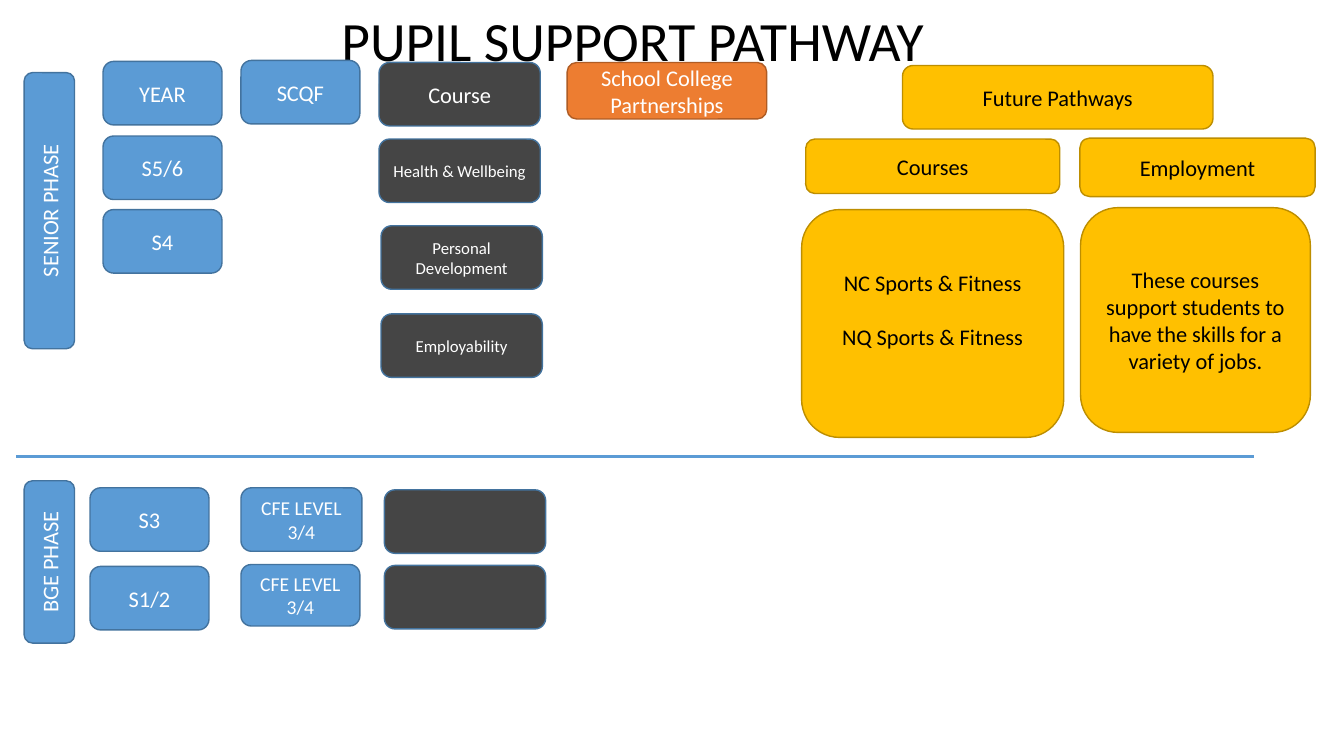
from lxml.etree import SubElement
from pptx import Presentation
from pptx.dml.color import RGBColor
from pptx.enum.shapes import MSO_CONNECTOR as CONN, MSO_SHAPE as SHAPE
from pptx.enum.text import MSO_ANCHOR as ANCHOR, MSO_AUTO_SIZE as FIT, PP_ALIGN as ALIGN
from pptx.oxml.ns import qn
from pptx.util import Inches, Pt

BLUE, BLUE_EDGE = RGBColor(0x5B, 0x9B, 0xD5), RGBColor(0x43, 0x73, 0x9E)
GREY = RGBColor(0x45, 0x45, 0x45)
ORANGE, ORANGE_EDGE = RGBColor(0xED, 0x7D, 0x31), RGBColor(0xAF, 0x5C, 0x24)
GOLD, GOLD_EDGE = RGBColor(0xFF, 0xC0, 0x00), RGBColor(0xBD, 0x8E, 0x00)
WHITE, BLACK = RGBColor(0xFF, 0xFF, 0xFF), RGBColor(0, 0, 0)

# Each kind of box: fill, edge, text colour
YEAR = (BLUE, BLUE_EDGE, WHITE)
COURSE = (GREY, BLUE_EDGE, WHITE)
PARTNER = (ORANGE, ORANGE_EDGE, WHITE)
FUTURE = (GOLD, GOLD_EDGE, BLACK)

# Usual box sizes, in percent of the slide
YEAR_W, COURSE_W, BOX_H = 8.85, 12, 8.4
SCQF_X = 17.93
LINE_GAP = Pt(19.5)


class PathwaySlide:
    """Draws on one slide; all positions are percentages of its size."""

    font = "Calibri"

    def __init__(self, prs):
        self.width, self.height = prs.slide_width, prs.slide_height
        self.slide = prs.slides.add_slide(prs.slide_layouts[5])

    def x(self, share):
        return round(self.width * share / 100)

    def y(self, share):
        return round(self.height * share / 100)

    def set_text(self, p, text, size, color):
        p.text = text
        p.alignment = ALIGN.CENTER
        p.font.name, p.font.size = self.font, Pt(size)
        p.font.color.rgb = color

    def title(self, text, x, y, w, h):
        sp = self.slide.shapes.title
        sp.left, sp.top = self.x(x), self.y(y)
        sp.width, sp.height = self.x(w), self.y(h)
        tf = sp.text_frame
        tf.auto_size, tf.vertical_anchor = FIT.NONE, ANCHOR.MIDDLE
        p = tf.paragraphs[0]
        self.set_text(p, text, 39.6, BLACK)
        p.line_spacing = 0.9

    def box(self, kind, x, y, w, h, *lines, size=16):
        fill, edge, color = kind
        sp = self.slide.shapes.add_shape(
            SHAPE.ROUNDED_RECTANGLE, self.x(x), self.y(y), self.x(w), self.y(h))
        sp.shadow.inherit = False
        sp.fill.solid()
        sp.fill.fore_color.rgb = fill
        sp.line.color.rgb, sp.line.width = edge, Pt(1)
        tf = sp.text_frame
        tf.word_wrap, tf.vertical_anchor = True, ANCHOR.MIDDLE
        for i, text in enumerate(lines):
            p = tf.add_paragraph() if i else tf.paragraphs[0]
            self.set_text(p, text, size, color)
            if i:
                p.space_before = LINE_GAP
        return sp

    def phase(self, text, y, h):
        """Adds a tall box whose text reads upwards."""
        sp = self.box(YEAR, 1.8, y, 3.75, h, text)
        sp.element.txBody.bodyPr.set("vert", "vert270")

    def rule(self, x1, x2, y):
        line = self.slide.shapes.add_connector(
            CONN.STRAIGHT, self.x(x1), self.y(y), self.x(x2), self.y(y))
        line.line.color.rgb, line.line.width = BLUE, Pt(2.25)
        SubElement(line.element.spPr, qn("a:effectLst"))


def main():
    prs = Presentation()
    prs.slide_width, prs.slide_height = Inches(13.33), Inches(7.5)
    s = PathwaySlide(prs)
    s.title("PUPIL SUPPORT PATHWAY", 17.33, 1.2, 59.5, 9.2)

    # Senior phase
    s.phase("SENIOR PHASE", 9.6, 36.53)
    for text, y in (("YEAR", 8.13), ("S5/6", 18), ("S4", 27.73)):
        s.box(YEAR, 7.67, y, YEAR_W, BOX_H, text)
    s.box(YEAR, SCQF_X, 8, YEAR_W, BOX_H, "SCQF")
    s.box(COURSE, 28.2, 8.27, COURSE_W, BOX_H, "Course")
    for text, x, y in (("Health & Wellbeing", 28.2, 18.4),
                       ("Personal Development", 28.35, 29.87),
                       ("Employability", 28.35, 41.53)):
        s.box(COURSE, x, y, COURSE_W, BOX_H, text, size=12)
    s.box(PARTNER, 42.2, 8.27, 14.85, 7.47, "School College Partnerships")

    # Future pathways
    s.box(FUTURE, 67.15, 8.67, 23.1, BOX_H, "Future Pathways")
    s.box(FUTURE, 59.95, 18.4, 18.9, 7.2, "Courses")
    s.box(FUTURE, 80.35, 18.27, 17.5, 7.73, "Employment")
    courses = s.box(FUTURE, 59.65, 27.73, 19.5, 30.13,
                    "NC Sports & Fitness", "NQ Sports & Fitness")
    courses.text_frame.margin_bottom += LINE_GAP
    s.box(FUTURE, 80.4, 27.47, 17.1, 29.73,
          "These courses support students to have the skills for a variety of jobs.")

    s.rule(1.2, 93.3, 60.4)

    # BGE phase
    s.phase("BGE PHASE", 63.6, 21.47)
    for text, y, level_y, level_w, level_h, course_y in (
            ("S3", 64.53, 64.53, 9, BOX_H, 64.8),
            ("S1/2", 74.93, 74.67, YEAR_W, 8.13, 74.8)):
        s.box(YEAR, 6.7, y, YEAR_W, BOX_H, text)
        s.box(YEAR, SCQF_X, level_y, level_w, level_h, "CFE LEVEL 3/4", size=14)
        s.box(COURSE, 28.6, course_y, COURSE_W, BOX_H)

    prs.save("out.pptx")


if __name__ == "__main__":
    main()
